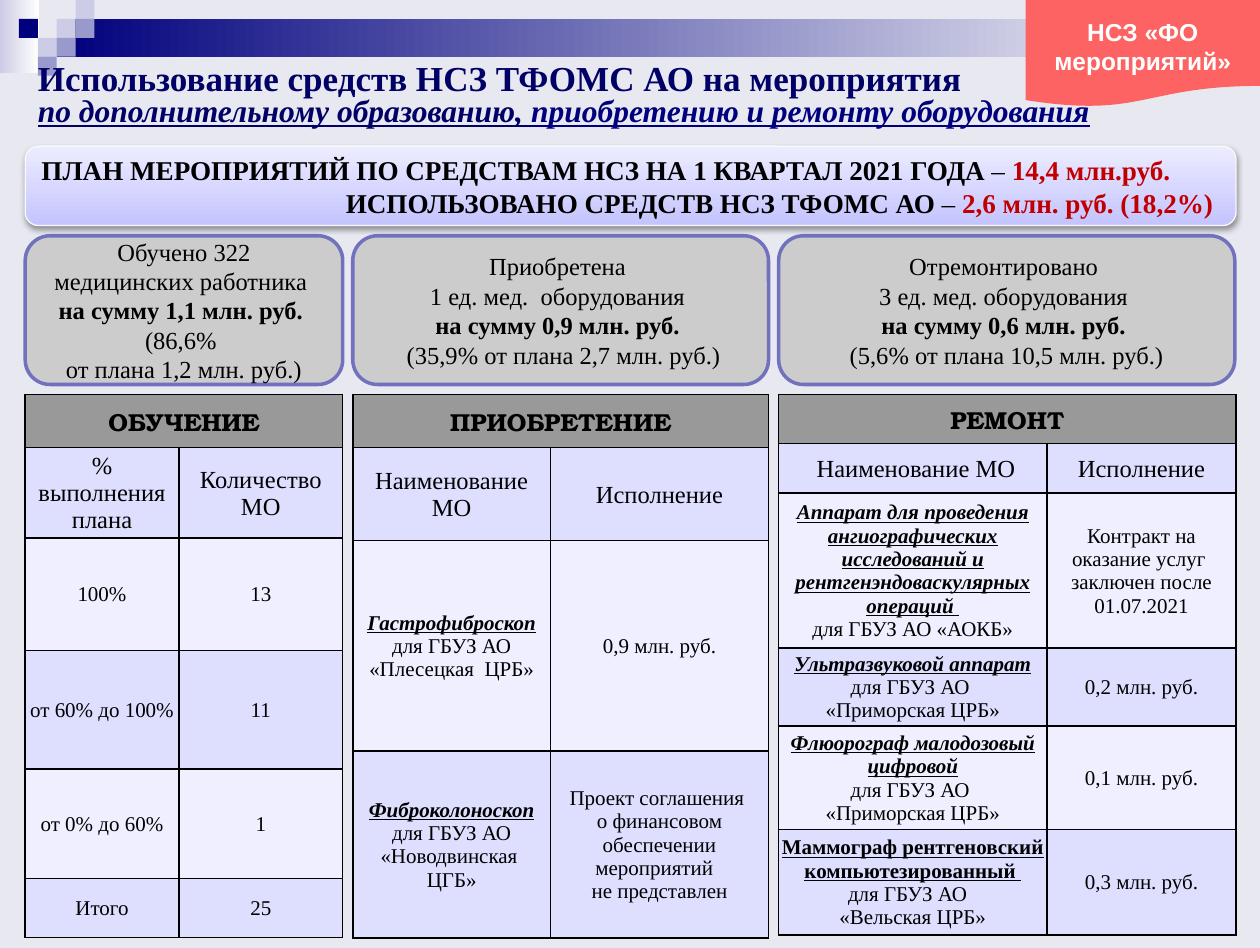
import copy
import dataclasses
import itertools

import lxml.etree
import pptx
import pptx.dml.color
import pptx.enum.shapes
import pptx.enum.text
import pptx.oxml.ns
import pptx.util

SHAPES = pptx.enum.shapes.MSO_SHAPE
ALIGN = pptx.enum.text.PP_ALIGN
MIDDLE = pptx.enum.text.MSO_ANCHOR.MIDDLE
SERIF = "Times New Roman"
COLORS = {
    "page": "E8E8F1", "ink": "000000", "white": "FFFFFF", "navy": "00007D",
    "title": "000066", "red": "C00000", "lilac": "CCCCE6", "violet": "9999CC",
    "plan_low": "C4C4FF", "plan_high": "ECECFF", "plan_edge": "F9F9F9",
    "card": "CCCCCC", "card_edge": "7171BD", "heading": "999999",
    "band_dark": "DEDEFF", "band_light": "EFEFFF", "flag": "FD6363",
}
MARGIN, GAP = 0.2, 0.08
LANE_WIDTHS = [2.52, 3.3, 3.62]
LANE_LEFTS = [MARGIN + sum(LANE_WIDTHS[:i]) + i * GAP for i in range(3)]
TILE = 0.15
TILES = [(3, 1, "lilac"), (4, 0, "lilac"), (4, 1, "violet"), (2, 2, "lilac"),
         (1, 1, "navy"), (3, 2, "violet"), (2, 3, "violet")]


@dataclasses.dataclass
class Piece:
    text: str
    style: str = ""
    color: str = "ink"
    size: float = 0


def device(name, purpose=""):
    return [[Piece(name, "biu")], [Piece(purpose)]]


CARDS = [
    [Piece("Обучено 322\nмедицинских работника \n"), Piece("на сумму 1,1 млн. руб. ", "b"),
     Piece(" (86,6% \nот плана 1,2 млн. руб.)")],
    [Piece("Приобретена \n1 ед. мед.  оборудования \n"), Piece("на сумму 0,9 млн. руб. \n", "b"),
     Piece(" (35,9% от плана 2,7 млн. руб.)")],
    [Piece("Отремонтировано \n3 ед. мед. оборудования \n"), Piece("на сумму 0,6 млн. руб. \n", "b"),
     Piece("(5,6% от плана 10,5 млн. руб.)")],
]
TABLES = [
    ("ОБУЧЕНИЕ", [1.22, 1.3], [0.42, 0.72, 0.89, 0.94, 0.87, 0.47], [
        ("% выполнения плана", "Количество МО"),
        ("100%", "13"), ("от 60% до 100%", "11"), ("от 0% до 60%", "1"), ("Итого", "25")]),
    ("ПРИОБРЕТЕНИЕ", [1.57, 1.73], [0.42, 0.74, 1.67, 1.48], [
        ("Наименование МО", "Исполнение"),
        (device("Гастрофиброскоп", "для ГБУЗ АО «Плесецкая  ЦРБ»"), "0,9 млн. руб."),
        (device("Фиброколоноскоп", "для ГБУЗ АО «Новодвинская  ЦГБ»"),
         "Проект соглашения \nо финансовом обеспечении мероприятий  \nне представлен")]),
    ("РЕМОНТ", [2.13, 1.5], [0.39, 0.39, 1.23, 0.62, 0.82, 0.84], [
        (" Наименование МО", "Исполнение"),
        (device("Аппарат для проведения ангиографических исследований и "
                "рентгенэндоваскулярных операций ", "для ГБУЗ АО «АОКБ»"),
         "Контракт на оказание услуг  заключен после 01.07.2021"),
        ([[Piece("Ультразвуковой аппарат ", "biu"), Piece("для ГБУЗ АО \n«Приморская ЦРБ»")]],
         "0,2 млн. руб."),
        (device("Флюорограф малодозовый цифровой", "для ГБУЗ АО \n«Приморская ЦРБ»"),
         "0,1 млн. руб."),
        ([[Piece("Маммограф рентгеновский компьютезированный ", "bu")],
          [Piece("для ГБУЗ АО  \n«Вельская ЦРБ»")]], "0,3 млн. руб.")]),
]


def rgb(name):
    return pptx.dml.color.RGBColor.from_string(COLORS[name])


def inches(*lengths):
    return [pptx.util.Inches(length) for length in lengths]


def write(frame, paragraphs, size, font=SERIF, align=ALIGN.CENTER):
    frame.word_wrap = True
    for index, pieces in enumerate(paragraphs):
        paragraph = frame.paragraphs[0] if index == 0 else frame.add_paragraph()
        paragraph.alignment = align
        for piece in pieces:
            for number, line in enumerate(piece.text.split("\n")):
                if number:
                    paragraph.add_line_break()
                    paragraph._p[-1].append(copy.deepcopy(run._r.rPr))
                if line:
                    run = paragraph.add_run()
                    run.text = line
                    run.font.name = font
                    run.font.size = pptx.util.Pt(piece.size or size)
                    run.font.bold = "b" in piece.style
                    run.font.italic = "i" in piece.style
                    run.font.underline = "u" in piece.style
                    run.font.color.rgb = rgb(piece.color)


def add_block(slide, kind, box, fill, edge=None, width=0):
    block = slide.shapes.add_shape(kind, *inches(*box))
    block.shadow.inherit = False
    block.text_frame.vertical_anchor = MIDDLE
    if isinstance(fill, str):
        block.fill.solid()
        block.fill.fore_color.rgb = rgb(fill)
    else:
        start, end, angle = fill
        block.fill.gradient()
        block.fill.gradient_angle = angle
        for stop, color in zip(block.fill.gradient_stops, (start, end)):
            stop.color.rgb = rgb(color)
    if edge:
        block.line.color.rgb = rgb(edge)
        block.line.width = pptx.util.Pt(width)
    else:
        block.line.fill.background()
    return block


def add_soft_shadow(block):
    effects = block._element.spPr.find(pptx.oxml.ns.qn("a:effectLst"))
    shadow = lxml.etree.SubElement(effects, pptx.oxml.ns.qn("a:outerShdw"),
                                   blurRad="39400", dist="20300", dir="5400000", rotWithShape="0")
    color = lxml.etree.SubElement(shadow, pptx.oxml.ns.qn("a:srgbClr"), val=COLORS["ink"])
    lxml.etree.SubElement(color, pptx.oxml.ns.qn("a:alpha"), val="38000")


def add_header_band(slide):
    add_block(slide, SHAPES.RECTANGLE, (0, 0, 0.31, 0.58), ("lilac", "white", 0))
    add_block(slide, SHAPES.RECTANGLE, (3 * TILE, TILE, 10 - 3 * TILE, 2 * TILE),
              ("navy", "white", 0))
    for column, row, color in TILES:
        add_block(slide, SHAPES.RECTANGLE, (column * TILE, row * TILE, TILE, TILE), color)


def place_title(slide):
    title = slide.shapes.title
    title.left, title.top, title.width, title.height = inches(MARGIN, 0.45, 9.53, 0.63)
    frame = title.text_frame
    frame.auto_size = pptx.enum.text.MSO_AUTO_SIZE.NONE
    frame.vertical_anchor = MIDDLE
    write(frame, [[
        Piece("Использование средств НСЗ ТФОМС АО на мероприятия \n", "b", "title"),
        Piece("по дополнительному образованию, ", "biu", "title", 18),
        Piece("приобретению и ремонту оборудования", "biu", "navy", 18)]], 20, align=ALIGN.LEFT)
    frame.paragraphs[0].line_spacing = 0.8
    slide.shapes._spTree.append(title._element)


def add_plan(slide):
    plan = add_block(slide, SHAPES.ROUNDED_RECTANGLE, (MARGIN, 1.16, 9.61, 0.63),
                     ("plan_low", "plan_high", 90), "plan_edge", 0.75)
    add_soft_shadow(plan)
    write(plan.text_frame, [
        [Piece("ПЛАН МЕРОПРИЯТИЙ ПО СРЕДСТВАМ НСЗ НА 1 КВАРТАЛ 2021 ГОДА", "b"),
         Piece(" – "), Piece("14,4 млн.руб.", "b", "red")],
        [Piece("ИСПОЛЬЗОВАНО СРЕДСТВ НСЗ ТФОМС АО ", "b"), Piece("– "),
         Piece("2,6 млн. руб. (18,2%) ", "b", "red")]], 15.5, align=ALIGN.LEFT)
    plan.text_frame.paragraphs[1].alignment = ALIGN.RIGHT


def dress_cell(cell, fill):
    cell.fill.solid()
    cell.fill.fore_color.rgb = rgb(fill)
    cell.vertical_anchor = MIDDLE
    properties = cell._tc.get_or_add_tcPr()
    for index, side in enumerate(("lnL", "lnR", "lnT", "lnB")):
        border = lxml.etree.Element(pptx.oxml.ns.qn("a:" + side), w="12700")
        paint = lxml.etree.SubElement(border, pptx.oxml.ns.qn("a:solidFill"))
        lxml.etree.SubElement(paint, pptx.oxml.ns.qn("a:srgbClr"), val=COLORS["ink"])
        properties.insert(index, border)


def add_lane_table(slide, left, heading, widths, heights, rows):
    table = slide.shapes.add_table(len(heights), len(widths),
                                   *inches(left, 3.13, sum(widths), sum(heights))).table
    for track, length in itertools.chain(zip(table.columns, widths)):
        track.width = pptx.util.Inches(length)
    for track, length in zip(table.rows, heights):
        track.height = pptx.util.Inches(length)
    for cell in table.rows[0].cells:
        dress_cell(cell, "heading")
    table.cell(0, 0).merge(table.cell(0, 1))
    write(table.cell(0, 0).text_frame, [[Piece(heading, "b")]], 14, "TeX Gyre Bonum")
    for row, values in enumerate(rows, 1):
        for column, value in enumerate(values):
            cell = table.cell(row, column)
            dress_cell(cell, "band_dark" if row % 2 else "band_light")
            cell.margin_left = cell.margin_right = cell.margin_top = pptx.util.Inches(0.01)
            cell.margin_bottom = 0
            paragraphs = [[Piece(value)]] if isinstance(value, str) else value
            write(cell.text_frame, paragraphs, 14 if row == 1 else 12)


def add_flag(slide):
    flag = add_block(slide, SHAPES.FLOWCHART_DOCUMENT, (8.14, 0, 1.86, 0.85), "flag")
    flag.text_frame.margin_top = pptx.util.Inches(0.1)
    write(flag.text_frame, [[Piece("НСЗ «ФО мероприятий»", "b", "white")]], 14, "Arial")


def main():
    deck = pptx.Presentation()
    deck.slide_width, deck.slide_height = inches(10, 7.52)
    slide = deck.slides.add_slide(deck.slide_layouts[5])
    slide.background.fill.solid()
    slide.background.fill.fore_color.rgb = rgb("page")
    add_header_band(slide)
    place_title(slide)
    add_plan(slide)
    for left, width, card, table in zip(LANE_LEFTS, LANE_WIDTHS, CARDS, TABLES):
        summary = add_block(slide, SHAPES.FLOWCHART_ALTERNATE_PROCESS,
                            (left, 1.87, width, 1.18), "card", "card_edge", 2)
        write(summary.text_frame, [card], 14)
        add_lane_table(slide, left, *table)
    add_flag(slide)
    deck.save("out.pptx")


if __name__ == "__main__":
    main()
